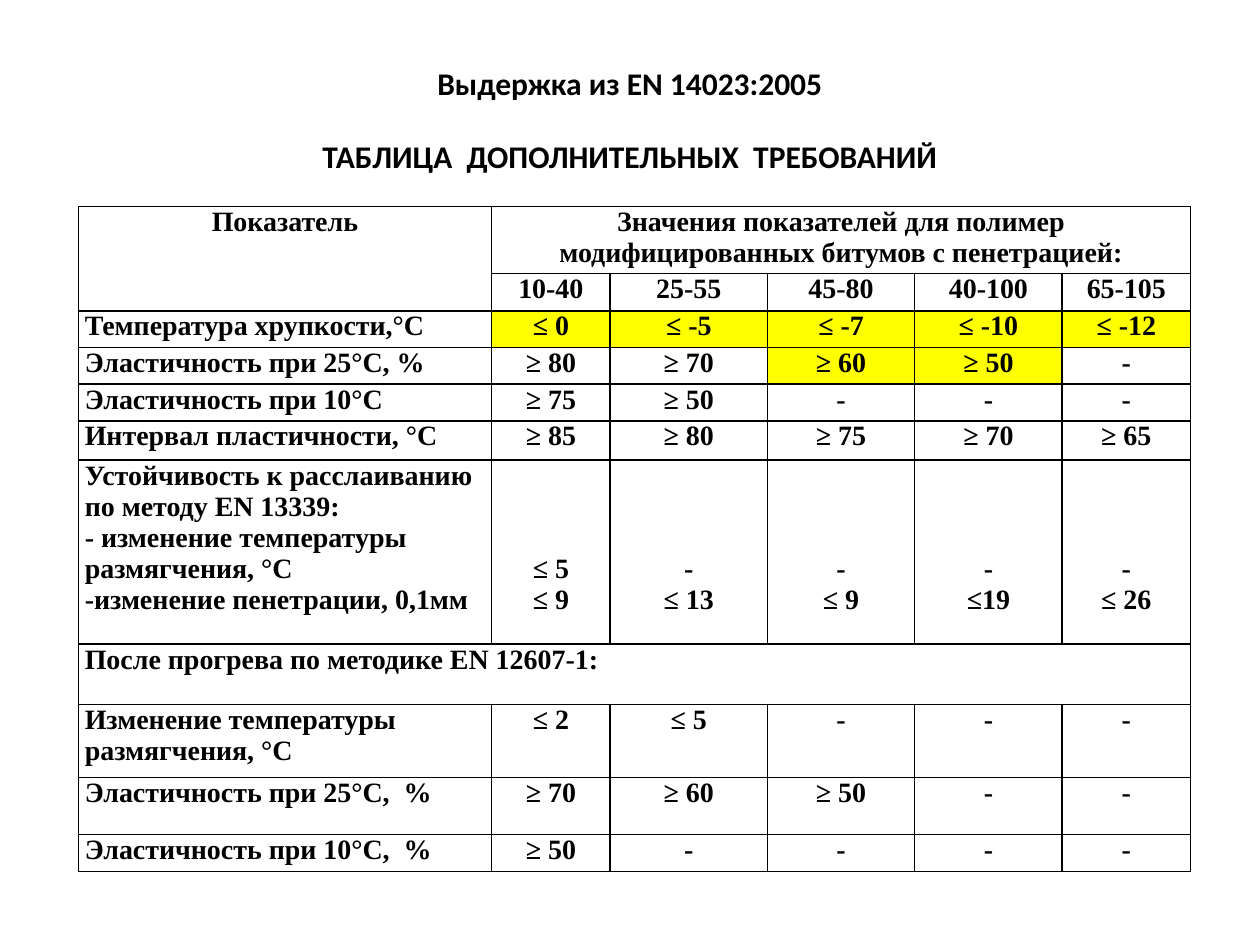
import pptx
import pptx.dml.color
import pptx.enum.text
import pptx.oxml
import pptx.oxml.ns
import pptx.util
from pptx.util import Cm

# Content
HEADINGS = ["Выдержка из EN 14023:2005", "ТАБЛИЦА  ДОПОЛНИТЕЛЬНЫХ  ТРЕБОВАНИЙ"]
STABILITY = [
    "Устойчивость к расслаиванию по методу EN 13339:",
    "- изменение температуры размягчения, °С",
    "-изменение пенетрации, 0,1мм",
]
# Each row: height in cm, then its cells; lines of one cell are split by \n
ROWS = [
    (1.26, ["Показатель", "Значения показателей для полимер модифицированных битумов с пенетрацией:"]),
    (0.75, ["", "10-40", "25-55", "45-80", "40-100", "65-105"]),
    (0.74, ["Температура хрупкости,°С", "≤ 0", "≤ -5", "≤ -7", "≤ -10", "≤ -12"]),
    (0.74, ["Эластичность при 25°С, %", "≥ 80", "≥ 70", "≥ 60", "≥ 50", "-"]),
    (0.74, ["Эластичность при 10°С", "≥ 75", "≥ 50", "-", "-", "-"]),
    (0.79, ["Интервал пластичности, °С", "≥ 85", "≥ 80", "≥ 75", "≥ 70", "≥ 65"]),
    (3.71, ["\n".join(STABILITY), "≤ 5\n≤ 9", "-\n≤ 13", "-\n≤ 9", "-\n≤19", "-\n≤ 26"]),
    (1.22, ["После прогрева по методике EN 12607-1:"]),
    (1.47, ["Изменение температуры размягчения, °С", "≤ 2", "≤ 5", "-", "-", "-"]),
    (1.15, ["Эластичность при 25°С,  %", "≥ 70", "≥ 60", "≥ 50", "-", "-"]),
    (0.74, ["Эластичность при 10°С,  %", "≥ 50", "-", "-", "-", "-"]),
]
COLUMN_WIDTHS = [8.33, 2.39, 3.17, 2.97, 2.97, 2.59]
MERGES = [((0, 0), (1, 0)), ((0, 1), (0, 5)), ((7, 0), (7, 5))]
HIGHLIGHTS = {2: range(1, 6), 3: range(3, 5)}  # row: columns
STABILITY_ROW = 6
STABILITY_OFFSET = 1.88  # drops the values beside the lines they belong to

THEME = {
    "text": "000000", "border": "000000", "highlight": "FFFF00",
    "heading_font": "Calibri", "heading_size": 18, "heading_gap": 20,
    "table_font": "Times New Roman", "table_size": 16, "border_width": 1,
}


def write_text(text_frame, text, *, font, size, centered=False, gap=0):
    """Fill a text frame with one bold paragraph per line of text."""
    text_frame.word_wrap = True
    for index, line in enumerate(text.split("\n")):
        paragraph = text_frame.add_paragraph() if index else text_frame.paragraphs[0]
        alignment = pptx.enum.text.PP_ALIGN
        paragraph.alignment = alignment.CENTER if centered else alignment.LEFT
        paragraph.space_before = pptx.util.Pt(gap if index else 0)
        run = paragraph.add_run()
        run.text = line
        run.font.name = font
        run.font.size = pptx.util.Pt(size)
        run.font.bold = True
        run.font.color.rgb = pptx.dml.color.RGBColor.from_string(THEME["text"])


def add_borders(cell):
    properties = cell._tc.get_or_add_tcPr()
    width = pptx.util.Pt(THEME["border_width"])
    for side in ("lnL", "lnR", "lnT", "lnB"):
        properties.append(pptx.oxml.parse_xml(
            f'<a:{side} {pptx.oxml.ns.nsdecls("a")} w="{width}"><a:solidFill>'
            f'<a:srgbClr val="{THEME["border"]}"/></a:solidFill></a:{side}>'))


def add_heading(slide):
    box = slide.shapes.add_textbox(Cm(1.27), Cm(0.76), Cm(22.86), Cm(3.18))
    box.text_frame.vertical_anchor = pptx.enum.text.MSO_ANCHOR.MIDDLE
    box.text_frame.margin_top = Cm(0.23)
    write_text(box.text_frame, "\n".join(HEADINGS), font=THEME["heading_font"],
               size=THEME["heading_size"], centered=True, gap=THEME["heading_gap"])


def add_requirements(slide):
    heights = [height for height, _ in ROWS]
    table = slide.shapes.add_table(
        len(ROWS), len(COLUMN_WIDTHS), Cm(1.58), Cm(4.16),
        Cm(sum(COLUMN_WIDTHS)), Cm(sum(heights))).table
    table.first_row = table.horz_banding = False
    for column, width in zip(table.columns, COLUMN_WIDTHS):
        column.width = Cm(width)
    for start, end in MERGES:
        table.cell(*start).merge(table.cell(*end))

    for row, (height, texts) in enumerate(ROWS):
        table.rows[row].height = Cm(height)
        for column in range(len(COLUMN_WIDTHS)):
            cell = table.cell(row, column)
            cell.margin_left = cell.margin_right = Cm(0.13)
            shifted = row == STABILITY_ROW and column > 0
            cell.margin_top = Cm(STABILITY_OFFSET if shifted else 0)
            cell.margin_bottom = 0
            add_borders(cell)
            if column in HIGHLIGHTS.get(row, ()):
                cell.fill.solid()
                cell.fill.fore_color.rgb = pptx.dml.color.RGBColor.from_string(THEME["highlight"])
            else:
                cell.fill.background()
            if column < len(texts) and texts[column]:
                write_text(cell.text_frame, texts[column], font=THEME["table_font"],
                           size=THEME["table_size"], centered=row == 0 or column > 0)


def main():
    presentation = pptx.Presentation()
    presentation.slide_width = Cm(25.4)
    presentation.slide_height = Cm(19.05)
    slide = presentation.slides.add_slide(presentation.slide_layouts[6])
    add_heading(slide)
    add_requirements(slide)
    presentation.save("out.pptx")


if __name__ == "__main__":
    main()
